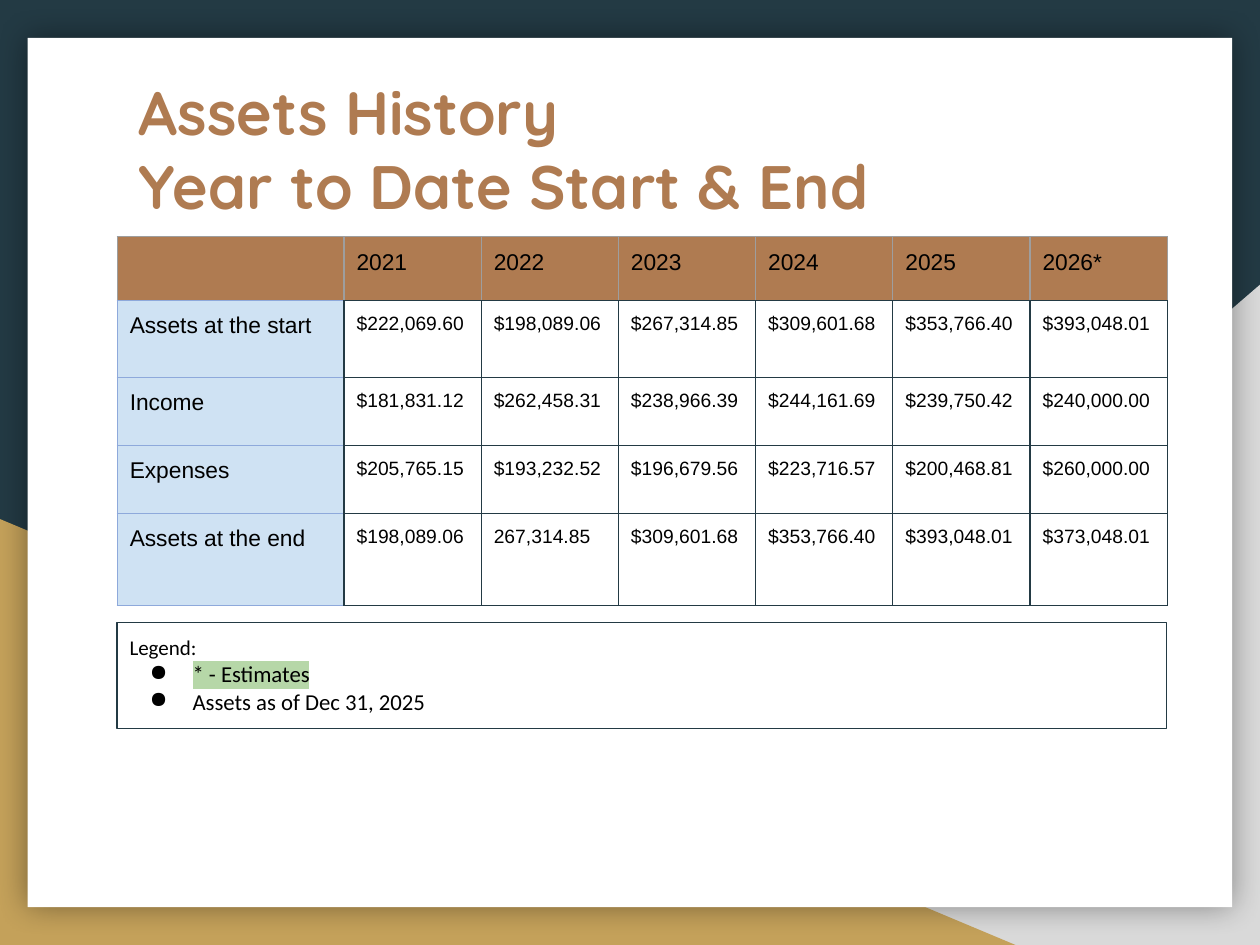
from dataclasses import dataclass
from typing import Any, Optional

from lxml import etree
from pptx import Presentation
from pptx import util as u
from pptx.dml.color import RGBColor
from pptx.enum import shapes, text
from pptx.oxml.ns import qn


@dataclass(frozen=True)
class Theme:
    navy: str = "233A44"
    gold: str = "C4A15A"
    silver: str = "D9D9D9"
    white: str = "FFFFFF"
    black: str = "000000"
    copper: str = "AF7B51"
    pale_blue: str = "CFE2F3"
    blue_line: str = "8EA9DB"
    gray_line: str = "9E9E9E"
    green: str = "B6D7A8"
    title_font: str = "Quicksand"
    table_font: str = "Arial"
    legend_font: str = "Calibri"
    title_size: float = 35
    label_size: float = 13
    value_size: float = 11
    legend_size: float = 12
    line: float = 0.75


@dataclass(frozen=True)
class Box:
    """Position and size in percent of the slide."""
    x: float
    y: float
    w: float
    h: float


@dataclass(frozen=True)
class Decor:
    kind: Any
    box: Box
    fill: str
    flip: bool = False
    shadow: bool = False


T = Theme()
WIDTH, HEIGHT = u.Inches(10), u.Inches(7.5)
INSET = u.Inches(0.1)

DECOR = [
    Decor(shapes.MSO_SHAPE.RIGHT_TRIANGLE, Box(39.2, 30.13, 60.8, 69.87), T.silver, flip=True),
    Decor(shapes.MSO_SHAPE.RIGHT_TRIANGLE, Box(0, 54.93, 80.6, 45.07), T.gold),
    Decor(shapes.MSO_SHAPE.RECTANGLE, Box(2.2, 4, 95.6, 92), T.white, shadow=True),
]
TITLE_BOX = Box(10, 6.53, 82.1, 18.53)
TABLE_BOX = Box(9.3, 25.07, 83.3, 38.53)
LEGEND_BOX = Box(9.3, 65.87, 83.3, 11.2)
LABEL_COL, YEAR_COL = 18, 10.89
ROW_HEIGHTS = [6.27, 8.13, 7.2, 7.2, 9.73]
ROWS = [
    ["", "2021", "2022", "2023", "2024", "2025", "2026*"],
    ["Assets at the start", "$222,069.60", "$198,089.06", "$267,314.85",
     "$309,601.68", "$353,766.40", "$393,048.01"],
    ["Income", "$181,831.12", "$262,458.31", "$238,966.39",
     "$244,161.69", "$239,750.42", "$240,000.00"],
    ["Expenses", "$205,765.15", "$193,232.52", "$196,679.56",
     "$223,716.57", "$200,468.81", "$260,000.00"],
    ["Assets at the end", "$198,089.06", "267,314.85", "$309,601.68",
     "$353,766.40", "$393,048.01", "$373,048.01"],
]


def across(pct: float) -> int:
    return round(WIDTH * pct / 100)


def down(pct: float) -> int:
    return round(HEIGHT * pct / 100)


def place(box: Box) -> tuple[int, int, int, int]:
    return across(box.x), down(box.y), across(box.w), down(box.h)


def rgb(color: str) -> RGBColor:
    return RGBColor.from_string(color)


def add_color(parent: Any, tag: str, color: str) -> Any:
    el = etree.SubElement(parent, qn(tag))
    return etree.SubElement(el, qn("a:srgbClr"), val=color)


def write(p: Any, content: str, *, font: str, size: float, color: str = T.black,
          bold: bool = False, highlight: Optional[str] = None, bullet: bool = False) -> None:
    p.alignment = text.PP_ALIGN.LEFT
    r = p.add_run()
    r.text = content
    r.font.name, r.font.size, r.font.bold = font, u.Pt(size), bold
    r.font.color.rgb = rgb(color)
    if highlight:
        rpr = r.font._element
        add_color(rpr, "a:highlight", highlight)
        rpr.find(qn("a:solidFill")).addnext(rpr.find(qn("a:highlight")))
    if bullet:
        ppr = p._p.get_or_add_pPr()
        ppr.set("marL", str(u.Inches(0.5)))
        ppr.set("indent", str(u.Inches(-0.34)))
        add_color(ppr, "a:buClr", color)
        etree.SubElement(ppr, qn("a:buChar"), char="●")


def set_frame(tf: Any) -> None:
    tf.word_wrap = True
    tf.vertical_anchor = text.MSO_ANCHOR.TOP
    tf.margin_left = tf.margin_right = tf.margin_top = tf.margin_bottom = INSET


def draw_decor(s: Any, item: Decor) -> None:
    sp = s.shapes.add_shape(item.kind, *place(item.box))
    sp.fill.solid()
    sp.fill.fore_color.rgb = rgb(item.fill)
    sp.line.fill.background()
    sp.shadow.inherit = False
    spPr = sp._element.spPr
    if item.flip:
        spPr.find(qn("a:xfrm")).set("flipH", "1")
    if item.shadow:
        color = add_color(spPr.find(qn("a:effectLst")), "a:outerShdw", T.black)
        color.getparent().set("blurRad", str(u.Pt(18)))
        etree.SubElement(color, qn("a:alpha"), val="40000")


def draw_title(s: Any) -> None:
    sp = s.shapes.title
    s.shapes._spTree.append(sp._element)
    sp.left, sp.top, sp.width, sp.height = place(TITLE_BOX)
    tf = sp.text_frame
    set_frame(tf)
    tf.auto_size = text.MSO_AUTO_SIZE.NONE
    style = dict(font=T.title_font, size=T.title_size, color=T.copper, bold=True)
    write(tf.paragraphs[0], "Assets History", **style)
    write(tf.add_paragraph(), "Year to Date Start & End", **style)


def border_colors(row: int, col: int) -> list[str]:
    """Colors for the left, right, top and bottom sides."""
    if row == 0:
        return [T.gray_line] * 3 + [T.navy if col else T.blue_line]
    if col == 0:
        return [T.blue_line, T.navy, T.blue_line, T.blue_line]
    return [T.navy] * 4


def format_cell(cell: Any, row: int, col: int, content: str) -> None:
    cell.margin_left = cell.margin_right = cell.margin_top = cell.margin_bottom = INSET
    cell.fill.solid()
    cell.fill.fore_color.rgb = rgb(T.copper if row == 0 else T.white if col else T.pale_blue)
    tcPr = cell._tc.get_or_add_tcPr()
    for i, (side, color) in enumerate(zip("LRTB", border_colors(row, col))):
        ln = etree.Element(qn(f"a:ln{side}"), w=str(u.Pt(T.line)))
        add_color(ln, "a:solidFill", color)
        tcPr.insert(i, ln)
    if content:
        size = T.value_size if row and col else T.label_size
        write(cell.text_frame.paragraphs[0], content, font=T.table_font, size=size)


def draw_table(s: Any) -> None:
    table = s.shapes.add_table(len(ROWS), len(ROWS[0]), *place(TABLE_BOX)).table
    for i, column in enumerate(table.columns):
        column.width = across(YEAR_COL if i else LABEL_COL)
    for row, (height, values) in enumerate(zip(ROW_HEIGHTS, ROWS)):
        table.rows[row].height = down(height)
        for col, content in enumerate(values):
            format_cell(table.cell(row, col), row, col, content)


def draw_legend(s: Any) -> None:
    sp = s.shapes.add_shape(shapes.MSO_SHAPE.RECTANGLE, *place(LEGEND_BOX))
    sp.shadow.inherit = False
    sp.fill.background()
    sp.line.color.rgb, sp.line.width = rgb(T.navy), u.Pt(T.line)
    tf = sp.text_frame
    set_frame(tf)
    write(tf.paragraphs[0], "Legend:", font=T.legend_font, size=T.legend_size)
    item = dict(font=T.legend_font, size=T.label_size, bullet=True)
    write(tf.add_paragraph(), "* - Estimates", highlight=T.green, **item)
    write(tf.add_paragraph(), "Assets as of Dec 31, 2025", **item)


def main() -> None:
    prs = Presentation()
    prs.slide_width, prs.slide_height = WIDTH, HEIGHT
    s = prs.slides.add_slide(prs.slide_layouts[5])
    s.background.fill.solid()
    s.background.fill.fore_color.rgb = rgb(T.navy)
    for item in DECOR:
        draw_decor(s, item)
    draw_title(s)
    draw_table(s)
    draw_legend(s)
    prs.save("out.pptx")


if __name__ == "__main__":
    main()
